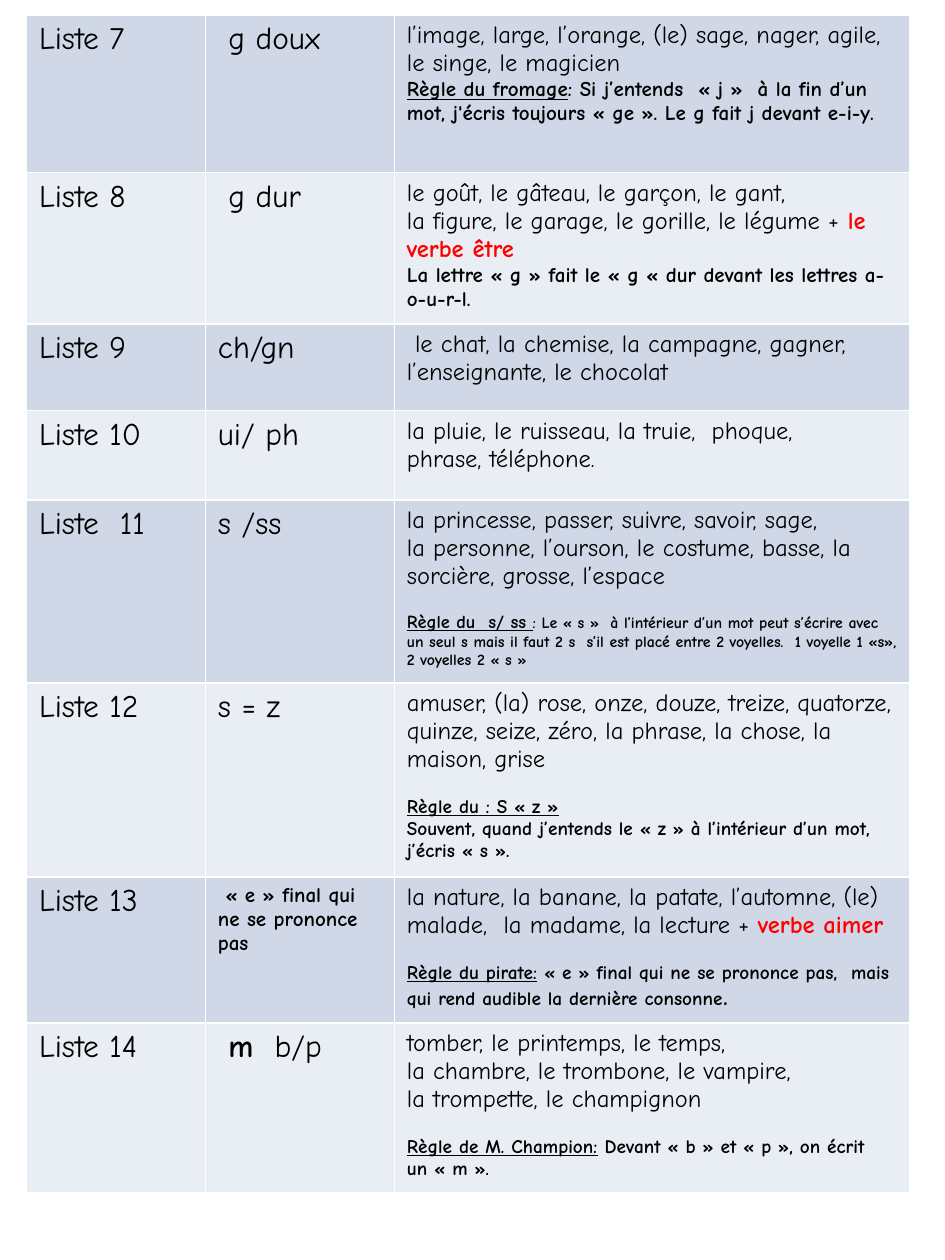
from pptx import Presentation
from pptx.dml.color import RGBColor
from pptx.util import Inches, Pt

BLACK = RGBColor(0x00, 0x00, 0x00)
RED = RGBColor(0xFF, 0x00, 0x00)
BANDS = (RGBColor(0xD0, 0xD8, 0xE8), RGBColor(0xE9, 0xED, 0xF4))
FONT = "Comic Neue"
NO_BREAK = chr(160)

TITLE, WORDS = 18, 14
COLUMN_WIDTHS = (1.42, 1.5, 4.09)

# Style: size, bold, underline, colour
STYLES = {
    "title": (TITLE, False, False, BLACK),
    "strong": (TITLE, True, False, BLACK),
    "words": (WORDS, False, False, BLACK),
    "verb": (WORDS, True, False, RED),
    "stop": (WORDS, True, False, BLACK),
    "heading12": (12, True, True, BLACK),
    "rule12": (12, True, False, BLACK),
    "heading11": (11, True, True, BLACK),
    "rule11": (11, True, False, BLACK),
    "heading10": (10.5, True, True, BLACK),
    "rule9": (9, True, False, BLACK),
}

# List: row height, name, sound, paragraphs, (paragraph set apart, gap in points)
LISTS = [
    (1.25, "Liste 7", [(" g doux", "title")], [
        [("l’image, large, l’orange, (le) sage, nager, agile, le singe, le magicien", "words")],
        [("Règle du fromage", "heading12"),
         (": Si j’entends  « j »  à la fin d’un mot, j'écris toujours « ge ». "
          "Le g fait j devant e-i-y.", "rule12")],
    ], None),
    (1.2, "Liste 8", [(" g dur", "title")], [
        [("le goût, le gâteau, le garçon, le gant,", "words")],
        [("la figure, le garage, le gorille, le légume + ", "words"), ("le verbe être", "verb")],
        [("La lettre « g » fait le « g « dur devant les lettres a-o-u-r-l.", "rule12")],
    ], None),
    (0.69, "Liste 9", [("ch/gn", "title")], [
        [(" le chat, la chemise, la campagne, gagner, l’enseignante, le chocolat", "words")],
    ], None),
    (0.71, "Liste 10", [("ui/ ph", "title")], [
        [("la pluie, le ruisseau, la truie,  phoque,", "words")],
        [("phrase, téléphone.", "words")],
    ], None),
    (1.45, "Liste  11", [("s /ss", "title")], [
        [("la princesse, passer, suivre, savoir, sage,", "words")],
        [("la personne, l’ourson, le costume, basse, la sorcière, grosse, l’espace", "words")],
        [("Règle du  s/ ss ", "heading10"),
         (": Le « s »  à l’intérieur d’un mot peut s’écrire avec un seul s mais il faut 2 s  "
          "s’il est placé entre 2 voyelles.  1 voyelle 1 «s», 2 voyelles 2 « s »", "rule9")],
    ], (2, 12)),
    (1.54, "Liste 12", [("s = z", "title")], [
        [("amuser, (la) rose, onze, douze, treize, quatorze, quinze, seize, zéro, "
          "la phrase, la chose, la maison, grise", "words")],
        [("Règle du : S « z »", "heading11")],
        [("Souvent, quand j’entends le « z » à l’intérieur d’un mot, j’écris « s ».", "rule11")],
    ], (1, 12.6)),
    (1.16, "Liste 13", [(" « e » final qui ne se prononce pas", "rule12")], [
        [("la nature, la banane, la patate, l’automne, (le) malade,  la madame, la lecture + ",
          "words"), ("verbe aimer", "verb")],
        [("Règle du pirate:", "heading11"),
         (" « e » final qui ne se prononce pas,  mais qui rend audible la dernière consonne",
          "rule11"), (".", "stop")],
    ], (1, 12.6)),
    (1.35, "Liste 14", [(" ", "title"), ("m", "strong"), ("  b/p", "title")], [
        [("tomber, le printemps, le temps,", "words")],
        [("la chambre, le trombone, le vampire,", "words")],
        [("la trompette, le champignon", "words")],
        [("Règle de M. Champion:", "heading11"),
         (" Devant « b » et « p », on écrit un « m ».", "rule11")],
    ], (3, 12.6)),
]


def french_spacing(text):
    text = text.replace("« ", "«" + NO_BREAK).replace(" »", NO_BREAK + "»")
    return text.replace("un «", "un" + NO_BREAK + "«")


def fill_cell(cell, paragraphs, band, gap=None):
    cell.fill.solid()
    cell.fill.fore_color.rgb = band
    frame = cell.text_frame
    for index, spans in enumerate(paragraphs):
        para = frame.add_paragraph() if index else frame.paragraphs[0]
        if gap and index == gap[0]:
            para.space_before = Pt(gap[1])
        for text, style in spans:
            span = para.add_run()
            span.text = french_spacing(text)
            size, bold, underline, colour = STYLES[style]
            span.font.name = FONT
            span.font.size = Pt(size)
            span.font.bold = bold
            span.font.underline = underline
            span.font.color.rgb = colour


def main():
    deck = Presentation()
    deck.slide_width, deck.slide_height = Inches(7.5), Inches(10)
    page = deck.slides.add_slide(deck.slide_layouts[6])
    height = sum(entry[0] for entry in LISTS)
    table = page.shapes.add_table(
        len(LISTS), len(COLUMN_WIDTHS), Inches(0.21), Inches(0.12),
        Inches(sum(COLUMN_WIDTHS)), Inches(height)).table
    table.first_row = False
    for column, width in zip(table.columns, COLUMN_WIDTHS):
        column.width = Inches(width)
    for index, (row_height, name, sound, lesson, gap) in enumerate(LISTS):
        table.rows[index].height = Inches(row_height)
        band = BANDS[index % 2]
        fill_cell(table.cell(index, 0), [[(name, "title")]], band)
        fill_cell(table.cell(index, 1), [sound], band)
        fill_cell(table.cell(index, 2), lesson, band, gap)
    deck.save("out.pptx")


if __name__ == "__main__":
    main()
